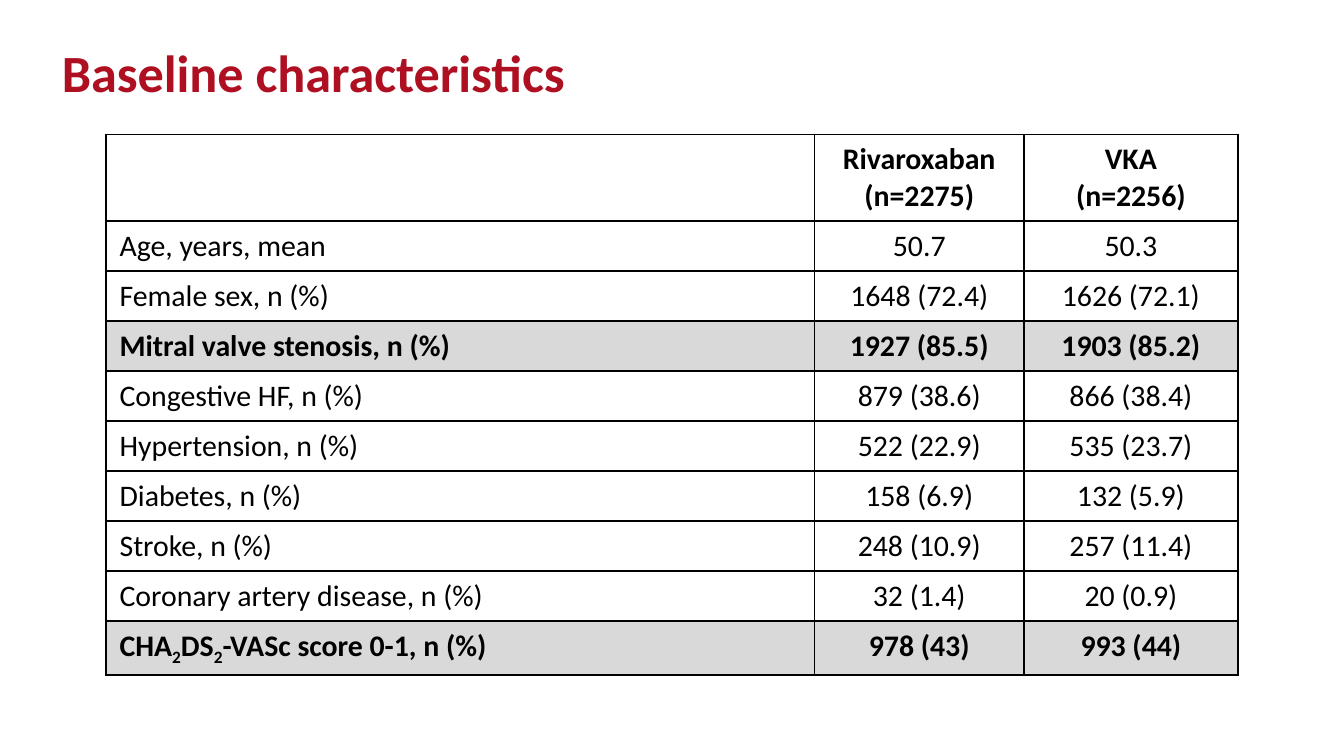
from dataclasses import dataclass

from lxml import etree
from pptx import Presentation
from pptx import util as u
from pptx.dml.color import RGBColor
from pptx.enum import text
from pptx.oxml import ns

COLORS = {"title": "AE1022", "text": "000000", "border": "000000", "highlight": "D9D9D9"}
FONT = "Calibri"
SLIDE_WIDTH = u.Inches(10)
SLIDE_HEIGHT = SLIDE_WIDTH * 9 // 16
COLUMN_WIDTHS = (5.27, 1.56, 1.59)
HEADER_HEIGHT, ROW_HEIGHT = 0.57, 0.37


@dataclass
class Row:
    label: str
    rivaroxaban: str
    vka: str
    bold: bool = False
    shaded: bool = False


# An underscore in a label marks the next character as a subscript.
ROWS = (
    Row("", "Rivaroxaban\n(n=2275)", "VKA\n(n=2256)", bold=True),
    Row("Age, years, mean", "50.7", "50.3"),
    Row("Female sex, n (%)", "1648 (72.4)", "1626 (72.1)"),
    Row("Mitral valve stenosis, n (%)", "1927 (85.5)", "1903 (85.2)", bold=True, shaded=True),
    Row("Congestive HF, n (%)", "879 (38.6)", "866 (38.4)"),
    Row("Hypertension, n (%)", "522 (22.9)", "535 (23.7)"),
    Row("Diabetes, n (%)", "158 (6.9)", "132 (5.9)"),
    Row("Stroke, n (%)", "248 (10.9)", "257 (11.4)"),
    Row("Coronary artery disease, n (%)", "32 (1.4)", "20 (0.9)"),
    Row("CHA_2DS_2-VASc score 0-1, n (%)", "978 (43)", "993 (44)", bold=True, shaded=True),
)


def write(frame, content: str, *, size: float, color: str = "text", bold: bool = False,
          align=text.PP_ALIGN.LEFT, line_spacing=None) -> None:
    """Fill a text frame, one paragraph a line, with underscores marking subscripts."""
    for index, line in enumerate(content.split("\n")):
        para = frame.paragraphs[0] if index == 0 else frame.add_paragraph()
        para.alignment = align
        if line_spacing:
            para.line_spacing = line_spacing
        first, *others = line.split("_")
        pieces = [(first, False)]
        for other in others:
            pieces += [(other[:1], True), (other[1:], False)]
        for piece, subscript in pieces:
            if not piece:
                continue
            span = para.add_run()
            span.text = piece
            span.font.name = FONT
            span.font.size = u.Pt(size)
            span.font.bold = bold
            span.font.color.rgb = RGBColor.from_string(COLORS[color])
            if subscript:
                span._r.get_or_add_rPr().set("baseline", "-25000")


def add_borders(cell) -> None:
    properties = cell._tc.get_or_add_tcPr()
    for side in ("a:lnL", "a:lnR", "a:lnT", "a:lnB"):
        line = etree.SubElement(properties, ns.qn(side), w=str(u.Pt(1)))
        fill = etree.SubElement(line, ns.qn("a:solidFill"))
        etree.SubElement(fill, ns.qn("a:srgbClr"), val=COLORS["border"])


def add_title(page, content: str) -> None:
    box = page.shapes.title
    box.left, box.top = int(SLIDE_WIDTH * 0.036), int(SLIDE_HEIGHT * 0.065)
    box.width, box.height = int(SLIDE_WIDTH * 0.835), int(SLIDE_HEIGHT * 0.084)
    box.text_frame.vertical_anchor = text.MSO_ANCHOR.TOP
    write(box.text_frame, content, size=28, color="title", bold=True, line_spacing=u.Pt(25))


def add_characteristics(page, rows: tuple[Row, ...]) -> None:
    height = HEADER_HEIGHT + ROW_HEIGHT * (len(rows) - 1)
    table = page.shapes.add_table(
        len(rows), len(COLUMN_WIDTHS), int(SLIDE_WIDTH * 0.079), int(SLIDE_HEIGHT * 0.178),
        u.Inches(sum(COLUMN_WIDTHS)), u.Inches(height)).table
    table.first_row = table.horz_banding = False
    for column, width in zip(table.columns, COLUMN_WIDTHS):
        column.width = u.Inches(width)
    for index, row in enumerate(rows):
        table.rows[index].height = u.Inches(ROW_HEIGHT if index else HEADER_HEIGHT)
        for position, content in enumerate((row.label, row.rivaroxaban, row.vka)):
            cell = table.cell(index, position)
            add_borders(cell)
            if row.shaded:
                cell.fill.solid()
                cell.fill.fore_color.rgb = RGBColor.from_string(COLORS["highlight"])
            else:
                cell.fill.background()
            align = text.PP_ALIGN.CENTER if position else text.PP_ALIGN.LEFT
            write(cell.text_frame, content, size=16, bold=row.bold, align=align)


def main() -> None:
    deck = Presentation()
    deck.slide_width, deck.slide_height = SLIDE_WIDTH, SLIDE_HEIGHT
    page = deck.slides.add_slide(deck.slide_layouts[5])
    add_title(page, "Baseline characteristics")
    add_characteristics(page, ROWS)
    deck.save("out.pptx")


if __name__ == "__main__":
    main()
